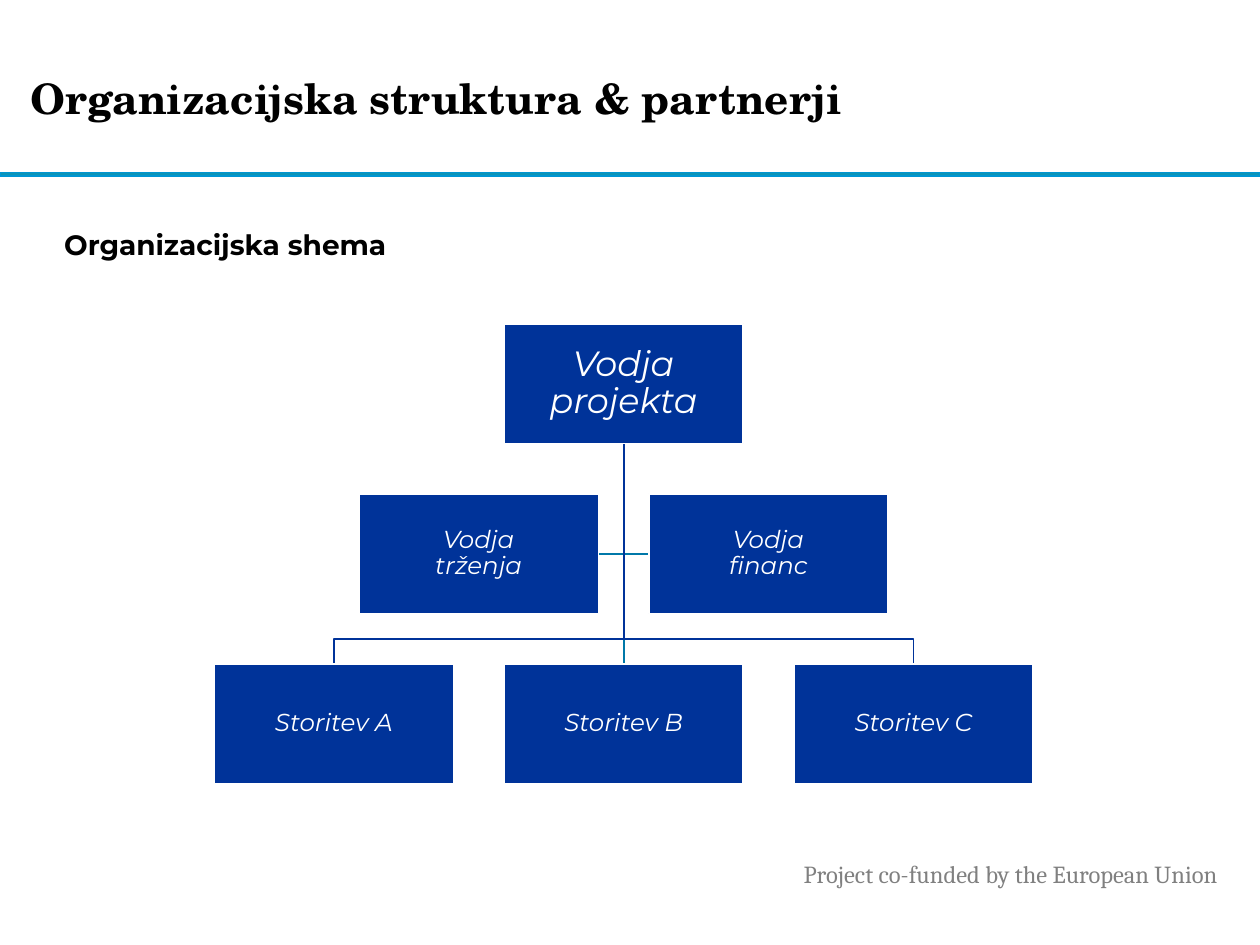
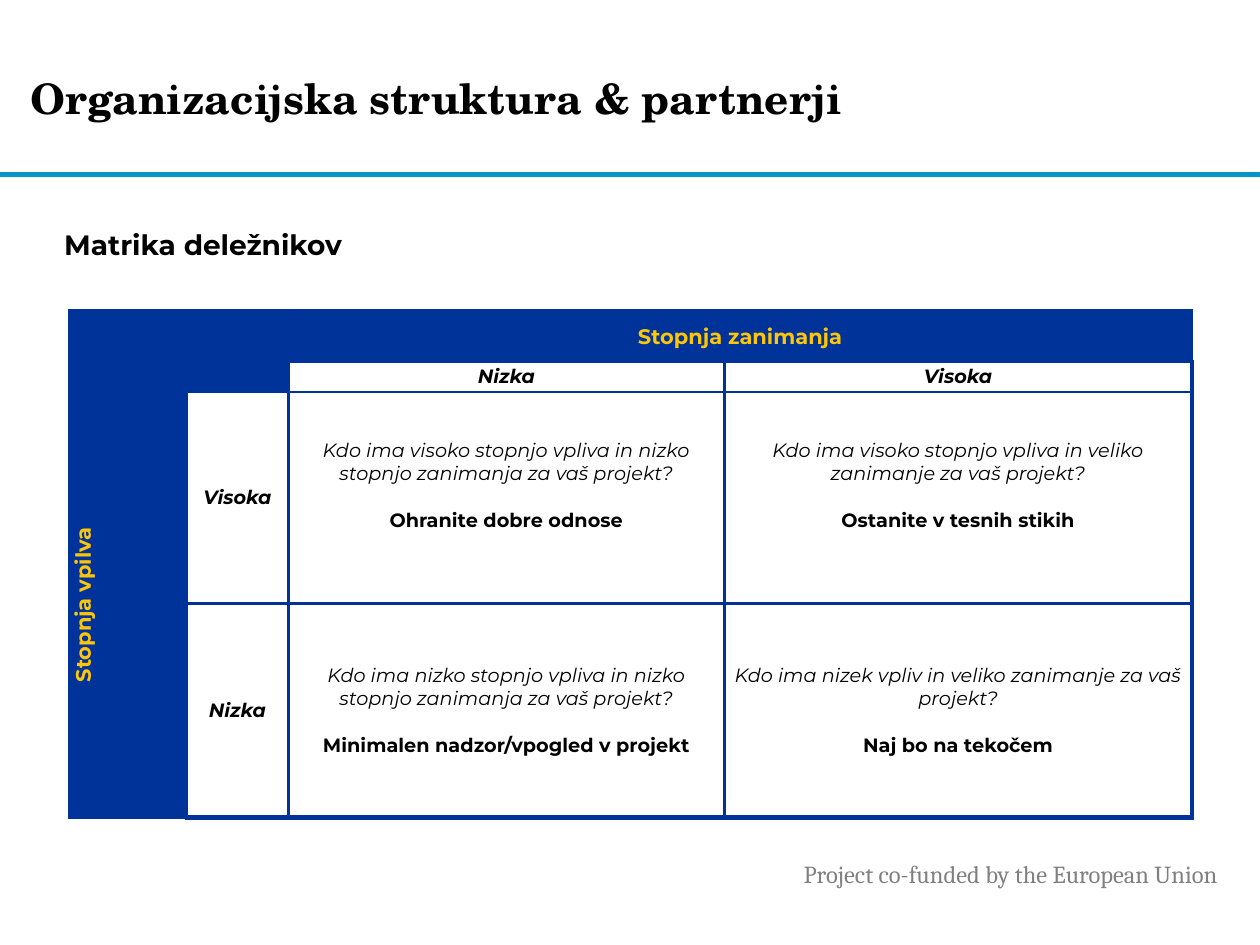
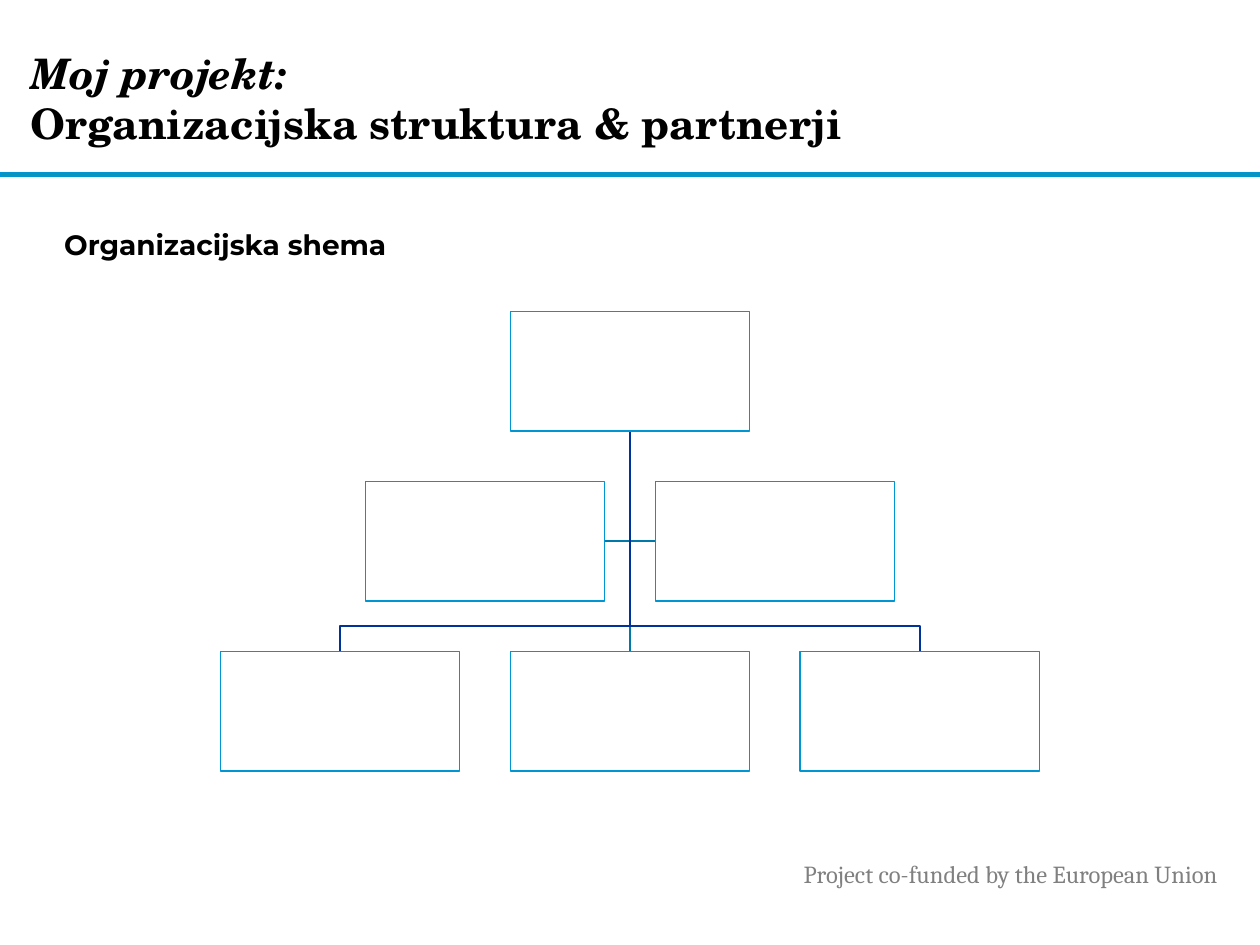
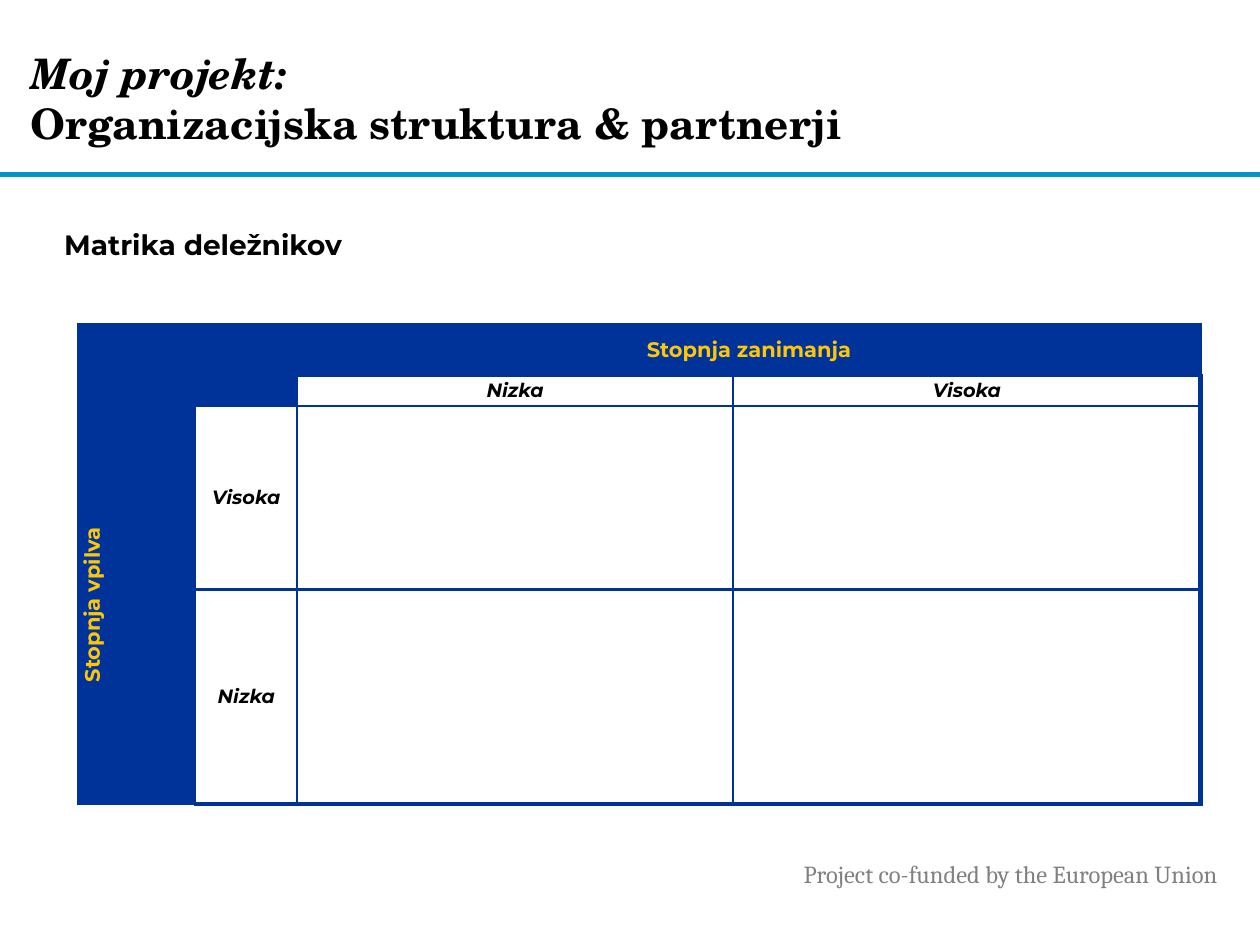
from dataclasses import dataclass

from lxml import etree
from pptx import Presentation, util as u
from pptx.dml.color import RGBColor
from pptx.enum import shapes, text
from pptx.oxml import ns

Inches, Pt = u.Inches, u.Pt


# Colours and type sizes
@dataclass(frozen=True)
class Theme:
    navy: str = "003399"
    teal: str = "0078A9"
    sky: str = "0096D3"
    band: str = "0C94B7"
    gold: str = "FDC608"
    grey: str = "808080"
    white: str = "FFFFFF"
    black: str = "000000"
    serif: str = "TeX Gyre Schola"
    sans: str = "Montserrat"
    small_serif: str = "Cambria"
    title: int = 24
    lead: int = 20
    heading: int = 16
    label: int = 14
    axis: int = 12
    cell: int = 11

    def style(self, role):
        return {
            "title": dict(name=self.serif, size=self.title, color=self.black, bold=True, italic=False),
            "title italic": dict(name=self.serif, size=self.title, color=self.black, bold=True, italic=True),
            "heading": dict(name=self.sans, size=self.heading, color=self.black, bold=True),
            "footer": dict(name=self.small_serif, size=self.label, color=self.grey),
            "lead": dict(name=self.sans, size=self.lead, color=self.white, italic=True),
            "node": dict(name=self.sans, size=self.label, color=self.white, italic=True),
            "axis": dict(name=self.sans, size=self.axis, color=self.gold, bold=True, italic=False),
            "level": dict(name=self.sans, size=self.cell, color=self.black, bold=True, italic=True),
            "question": dict(name=self.sans, size=self.cell, color=self.black, bold=False, italic=True),
            "action": dict(name=self.sans, size=self.cell, color=self.black, bold=True, italic=False),
        }[role]


CENTER = text.PP_ALIGN.CENTER
MIDDLE = text.MSO_ANCHOR.MIDDLE
SIDES = ("left", "top", "right", "bottom")

# Organisation chart grid
NODE_W, NODE_H = 1.9, 0.95
PITCH_X, PITCH_Y = 2.3, 1.35
BEND = 0.2

# Matrix grid
COLUMNS = (0.92, 0.81, 3.46, 3.71)
LINE_GAP = 13.4
THICK, THIN = 3, 1.5


class Deck:
    def __init__(self, theme):
        self.theme = theme
        self.presentation = Presentation()
        self.presentation.slide_width = Inches(10)
        self.presentation.slide_height = Inches(7.5)
        self.slide = None

    def new_slide(self, title, heading):
        """Start a slide with its band, footer, heading and title."""
        self.slide = self.presentation.slides.add_slide(self.presentation.slide_layouts[6])
        self.box(0, 1.37, 10, 0.03, fill=self.theme.band, line=self.theme.sky)
        footer = self.textbox(6.28, 6.77, 3.66, 0.34, [[("Project co-funded by the European Union", "footer")]])
        footer.auto_size = text.MSO_AUTO_SIZE.SHAPE_TO_FIT_TEXT
        self.textbox(0.51, 1.76, 8.49, 5.06, [[(heading, "heading")]], (0, 0.05, 0, 0.05))
        frame = self.textbox(0.24, 0.18, 7.54, 1.19, [title], (0, 0, 0, 0))
        frame.vertical_anchor = MIDDLE

    def add_text(self, frame, paragraphs, **paragraph_format):
        """Fill a frame; the runs of one paragraph stand on separate lines."""
        for index, runs in enumerate(paragraphs):
            paragraph = frame.add_paragraph() if index else frame.paragraphs[0]
            for key, value in paragraph_format.items():
                if index or key != "space_before":
                    setattr(paragraph, key, value)
            for position, (words, role) in enumerate(runs):
                if position:
                    paragraph.add_line_break()
                run = paragraph.add_run()
                run.text = words
                for key, value in self.theme.style(role).items():
                    if key == "color":
                        run.font.color.rgb = RGBColor.from_string(value)
                    else:
                        setattr(run.font, key, Pt(value) if key == "size" else value)

    def margins(self, holder, insets):
        for side, inset in zip(SIDES, insets):
            setattr(holder, f"margin_{side}", Inches(inset))

    def textbox(self, left, top, width, height, paragraphs, insets=(0.1, 0.05, 0.1, 0.05)):
        frame = self.slide.shapes.add_textbox(
            Inches(left), Inches(top), Inches(width), Inches(height)).text_frame
        frame.word_wrap = True
        self.margins(frame, insets)
        self.add_text(frame, paragraphs)
        return frame

    def outline(self, shape, color, width):
        shape.line.color.rgb = RGBColor.from_string(color)
        shape.line.width = Pt(width)

    def box(self, left, top, width, height, fill=None, line=None, line_width=1):
        shape = self.slide.shapes.add_shape(
            shapes.MSO_SHAPE.RECTANGLE, Inches(left), Inches(top), Inches(width), Inches(height))
        shape.shadow.inherit = False
        if fill:
            shape.fill.solid()
            shape.fill.fore_color.rgb = RGBColor.from_string(fill)
        else:
            shape.fill.background()
        self.outline(shape, line, line_width)
        return shape

    def node(self, center, top, paragraphs):
        """A filled chart box, or an empty outlined one to fill in."""
        filled = bool(paragraphs)
        shape = self.box(center - NODE_W / 2, top, NODE_W, NODE_H,
                         fill=self.theme.navy if filled else None,
                         line=self.theme.white if filled else self.theme.sky,
                         line_width=1 if filled else 0.75)
        if filled:
            frame = shape.text_frame
            frame.word_wrap = True
            frame.vertical_anchor = MIDDLE
            self.margins(frame, (0.01,) * 4)
            self.add_text(frame, paragraphs, alignment=CENTER, line_spacing=0.9)
        return shape

    def send_back(self, shape):
        self.slide.shapes._spTree.insert(2, shape._element)

    def elbow(self, points, color):
        (start_x, start_y), *rest = [(Inches(x), Inches(y)) for x, y in points]
        builder = self.slide.shapes.build_freeform(start_x, start_y)
        builder.add_line_segments(rest, close=False)
        shape = builder.convert_to_shape()
        shape.shadow.inherit = False
        shape.fill.background()
        self.outline(shape, color, 1)
        self.send_back(shape)

    def trunk(self, upper, lower, color):
        connector = self.slide.shapes.add_connector(shapes.MSO_CONNECTOR.STRAIGHT, 0, 0, 0, 0)
        connector.begin_connect(upper, 2)
        connector.end_connect(lower, 0)
        self.outline(connector, color, 1)
        etree.SubElement(connector._element.spPr, ns.qn("a:effectLst"))
        self.send_back(connector)

    def org_chart(self, center, top, leader=(), assistants=((), ()), services=((), (), ())):
        middle, bottom = top + PITCH_Y, top + 2 * PITCH_Y
        start = (center, top + NODE_H)
        lead = self.node(center, top, leader)
        service_nodes = [self.node(center + offset * PITCH_X, bottom, words)
                         for offset, words in zip((-1, 0, 1), services)]
        for side, words in zip((-1, 1), assistants):
            self.node(center + side * PITCH_X / 2, middle, words)

        # Lines, front to back
        for side in (-1, 1):
            x, bend = center + side * PITCH_X, bottom - BEND
            self.elbow([start, (center, bend), (x, bend), (x, bottom)], self.theme.navy)
        self.trunk(lead, service_nodes[1], self.theme.teal)
        for side in (-1, 1):
            y = middle + NODE_H / 2
            x = center + side * (PITCH_X - NODE_W) / 2
            self.elbow([start, (center, y), (x, y)], self.theme.teal)

    def borders(self, cell, widths):
        properties = cell._tc.get_or_add_tcPr()
        for side, width in widths.items():
            line = etree.SubElement(properties, ns.qn(f"a:ln{side}"), w=str(Pt(width)))
            fill = etree.SubElement(line, ns.qn("a:solidFill"))
            etree.SubElement(fill, ns.qn("a:srgbClr"), val=self.theme.navy)

    def matrix(self, left, top, rows, answers):
        table = self.slide.shapes.add_table(
            len(rows), len(COLUMNS), Inches(left), Inches(top),
            Inches(sum(COLUMNS)), Inches(sum(rows))).table
        table.first_row = table.horz_banding = False
        for column, width in zip(table.columns, COLUMNS):
            column.width = Inches(width)
        for row, height in zip(table.rows, rows):
            row.height = Inches(height)

        content = {
            (0, 2): [[("Stopnja zanimanja", "axis")]],
            (1, 2): [[("Nizka", "level")]],
            (1, 3): [[("Visoka", "level")]],
            (2, 0): [[("Stopnja vpilva", "axis")]],
            (2, 1): [[("Visoka", "level")]],
            (3, 1): [[("Nizka", "level")]],
            **answers,
        }
        last_row, last_column = len(rows) - 1, len(COLUMNS) - 1
        for r in range(len(rows)):
            for c in range(len(COLUMNS)):
                cell = table.cell(r, c)
                self.margins(cell, (0.06, 0, 0.06, 0))
                cell.vertical_anchor = MIDDLE
                self.borders(cell, {
                    "L": THIN if c else THICK,
                    "R": THICK if c == last_column else THIN,
                    "T": THIN if r else THICK,
                    "B": THICK if r == last_row else THIN,
                })
                if r == 0 or c == 0 or (r, c) == (1, 1):
                    cell.fill.solid()
                    cell.fill.fore_color.rgb = RGBColor.from_string(self.theme.navy)
                else:
                    cell.fill.background()
                if (r, c) in content:
                    self.add_text(cell.text_frame, content[r, c], alignment=CENTER,
                                  space_before=Pt(LINE_GAP))
                else:
                    etree.SubElement(cell.text_frame.paragraphs[0]._p, ns.qn("a:endParaRPr"),
                                     sz=str(self.theme.cell * 100))

        # The upper answers sit one line above the middle
        if answers:
            for c in (2, 3):
                table.cell(2, c).margin_bottom = Inches(0.19)
        table.cell(2, 0)._tc.get_or_add_tcPr().set("vert", "vert270")
        for first, last in (((0, 0), (0, 1)), ((0, 2), (0, 3)), ((1, 0), (1, 1)), ((2, 0), (3, 0))):
            table.cell(*first).merge(table.cell(*last))


def answer(question, action):
    return [[(question, "question")], [(action, "action")]]


def main():
    deck = Deck(Theme())
    title = [("Organizacijska struktura & partnerji", "title")]
    my_title = [("Moj projekt:", "title italic"), *title]
    chart_heading, matrix_heading = "Organizacijska shema", "Matrika deležnikov"

    # Example organisation chart
    deck.new_slide(title, chart_heading)
    deck.org_chart(
        4.95, 2.57,
        leader=[[("Vodja projekta", "lead")]],
        assistants=[[[("Vodja", "node")], [(area, "node")]] for area in ("trženja", "financ")],
        services=[[[(f"Storitev {letter}", "node")]] for letter in "ABC"])

    # Example stakeholder matrix
    deck.new_slide(title, matrix_heading)
    deck.matrix(0.56, 2.47, (0.4, 0.24, 1.68, 1.7), {
        (2, 2): answer("Kdo ima visoko stopnjo vpliva in nizko stopnjo zanimanja za vaš projekt?",
                       "Ohranite dobre odnose"),
        (2, 3): answer("Kdo ima visoko stopnjo vpliva in veliko zanimanje za vaš projekt?",
                       "Ostanite v tesnih stikih"),
        (3, 2): answer("Kdo ima nizko stopnjo vpliva in nizko stopnjo zanimanja za vaš projekt?",
                       "Minimalen nadzor/vpogled v projekt"),
        (3, 3): answer("Kdo ima nizek vpliv in veliko zanimanje za vaš projekt?",
                       "Naj bo na tekočem"),
    })

    # Organisation chart to fill in
    deck.new_slide(my_title, chart_heading)
    deck.org_chart(5, 2.47)

    # Stakeholder matrix to fill in
    deck.new_slide(my_title, matrix_heading)
    deck.matrix(0.63, 2.58, (0.4, 0.24, 1.46, 1.7), {})

    deck.presentation.save("out.pptx")


if __name__ == "__main__":
    main()
